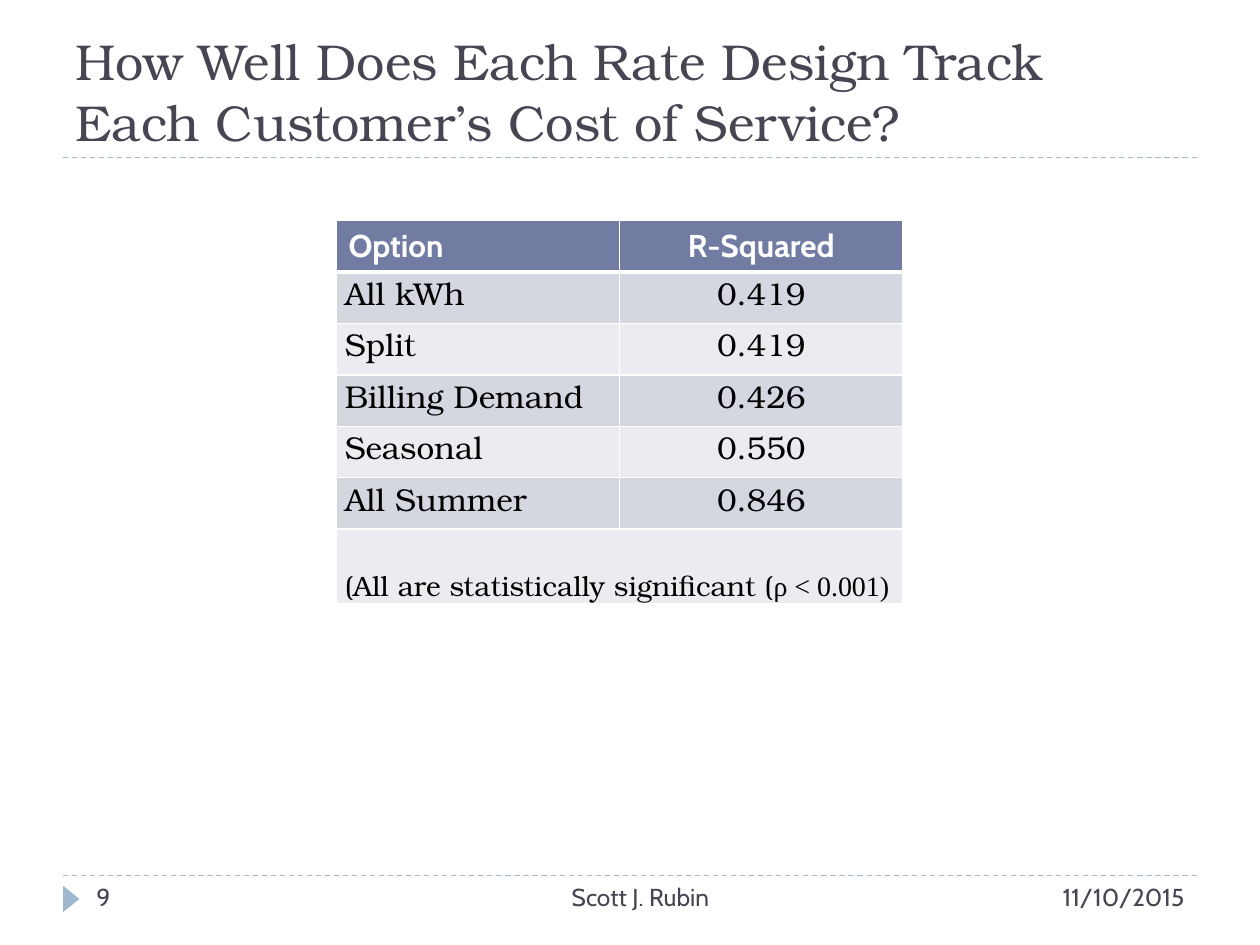
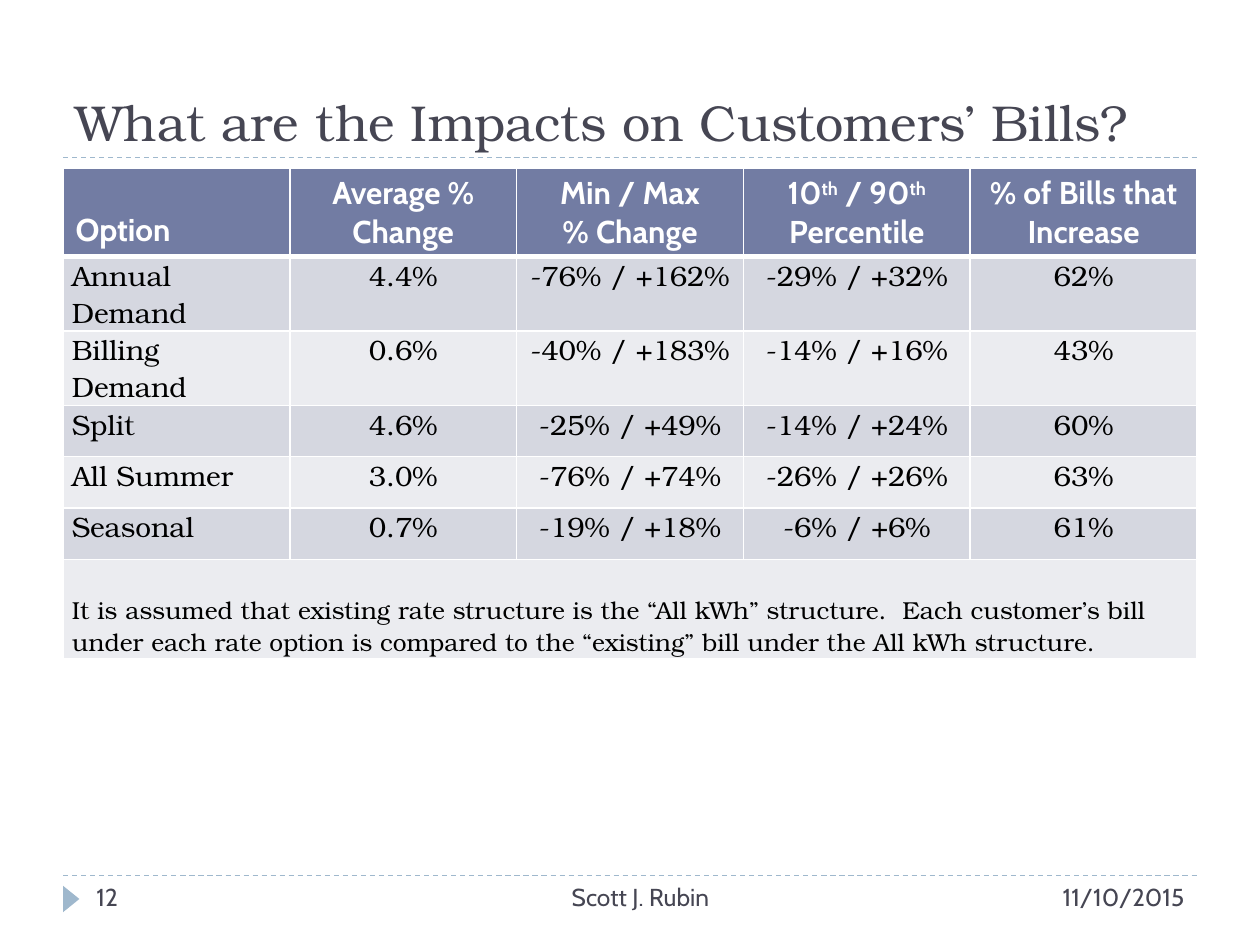
"""Build two slides that compare electric rate designs in tables."""
from lxml.etree import SubElement
from pptx import Presentation
from pptx.dml.color import RGBColor
from pptx.enum.dml import MSO_LINE
from pptx.enum.shapes import MSO_CONNECTOR, MSO_SHAPE
from pptx.enum.text import MSO_ANCHOR as ANCHOR, MSO_AUTO_SIZE as FIT, PP_ALIGN as ALIGN
from pptx.oxml.ns import qn
from pptx.util import Inches, Pt

INK = RGBColor(0x46, 0x46, 0x53)
ACCENT = RGBColor(0x9F, 0xB8, 0xCD)
HEADER = RGBColor(0x72, 0x7C, 0xA3)
BANDS = RGBColor(0xD5, 0xD7, 0xE0), RGBColor(0xEB, 0xEC, 0xF0)
WHITE = RGBColor(0xFF, 0xFF, 0xFF)
BLACK = RGBColor(0, 0, 0)

SERIF, SANS, MATH = "TeX Gyre Bonum", "Cabin", "Times New Roman"
COLUMNS, ROWS = 60, 90
LINE_ROWS = 4.9
SUPER = {"raised": True}


def write(frame, content, align=ALIGN.LEFT, **base):
    """Fill a frame with a string or (string, overrides) runs; newlines break lines."""
    frame.word_wrap = True
    paragraph = frame.paragraphs[0]
    paragraph.alignment = align
    runs = [(content, {})] if isinstance(content, str) else content
    for words, changes in runs:
        look = {**base, **changes}
        for number, line in enumerate(words.split("\n")):
            if number:
                paragraph.add_line_break()
            run = paragraph.add_run()
            run.text = line
            run.font.name = look["font"]
            run.font.size = Pt(look["size"])
            run.font.bold = look.get("bold", False)
            run.font.color.rgb = look["color"]
            if look.get("raised"):
                run._r.get_or_add_rPr().set("baseline", "30000")


def set_borders(cell, **widths):
    """Give a cell white borders with widths in points, keyed by side."""
    properties = cell._tc.get_or_add_tcPr()
    for side in "LRTB":
        edge = SubElement(properties, qn(f"a:ln{side}"), w=str(Pt(widths.get(side, 1))))
        fill = SubElement(edge, qn("a:solidFill"))
        SubElement(fill, qn("a:srgbClr"), val=str(WHITE))


class Deck:
    """Hold the shared style and the slide being built."""

    def __init__(self):
        """Start an empty 4:3 presentation."""
        self.show = Presentation()
        self.show.slide_width, self.show.slide_height = Inches(10), Inches(7.5)
        self.slide = None

    def x(self, columns):
        """Turn grid columns into a length."""
        return int(self.show.slide_width * columns / COLUMNS)

    def y(self, rows):
        """Turn grid rows into a length."""
        return int(self.show.slide_height * rows / ROWS)

    def box(self, left, top, width, height):
        """Turn a grid rectangle into lengths."""
        return self.x(left), self.y(top), self.x(width), self.y(height)

    def page(self, title, number):
        """Add a slide with its title, rules and footer."""
        self.slide = self.show.slides.add_slide(self.show.slide_layouts[5])
        for row in (83.4, 15):
            self.rule(row)
        self.marker()
        self.title(title)
        self.footer(number, 4, 13, ALIGN.LEFT)
        self.footer("Scott J. Rubin", 19, 23, ALIGN.CENTER)
        self.footer("11/10/2015", 42, 15, ALIGN.RIGHT)

    def title(self, words):
        """Place and format the title."""
        heading = self.slide.shapes.title
        heading.left, heading.top, heading.width, heading.height = self.box(3, 2, 54, 13)
        frame = heading.text_frame
        frame.auto_size = FIT.NONE
        frame.vertical_anchor = ANCHOR.BOTTOM
        write(frame, words, font=SERIF, size=28.8, color=INK)

    def rule(self, row):
        """Draw a dashed line between the side margins."""
        rule = self.slide.shapes.add_connector(
            MSO_CONNECTOR.STRAIGHT, self.x(3), self.y(row), self.x(57), self.y(row))
        rule.line.color.rgb = ACCENT
        rule.line.width = Pt(0.75)
        rule.line.dash_style = MSO_LINE.DASH
        SubElement(rule._element.spPr, qn("a:effectLst"))

    def marker(self):
        """Draw the arrowhead beside the page number."""
        marker = self.slide.shapes.add_shape(
            MSO_SHAPE.ISOSCELES_TRIANGLE, *self.box(2.76, 84.84, 1.26, 1.56))
        marker.rotation = 90
        marker.shadow.inherit = False
        marker.fill.solid()
        marker.fill.fore_color.rgb = ACCENT
        marker.line.fill.background()

    def footer(self, words, left, width, align):
        """Add one part of the footer."""
        part = self.slide.shapes.add_textbox(*self.box(left, 83.4, width, 4.8))
        write(part.text_frame, words, align, font=SANS, size=14, color=INK)

    def table(self, left, top, width, records, heights, size, note, note_size):
        """Add a banded table whose last row is a note across all columns."""
        count = len(records[0])
        rows = [*records, [note] + [""] * (count - 1)]
        table = self.slide.shapes.add_table(
            len(rows), count, *self.box(left, top, width, sum(heights))).table
        for column in table.columns:
            column.width = self.x(width / count)
        for r, record in enumerate(rows):
            table.rows[r].height = self.y(heights[r])
            for c, words in enumerate(record):
                cell = table.cell(r, c)
                set_borders(cell, T=3 if r == 1 else 1, B=3 if r == 0 else 1)
                cell.fill.solid()
                cell.fill.fore_color.rgb = BANDS[(r - 1) % 2] if r else HEADER
                if r:
                    cell.margin_left = cell.margin_right = Inches(0.07)
                    cell.margin_top = cell.margin_bottom = 0
                    look = dict(font=SERIF, size=size, color=BLACK)
                else:
                    look = dict(font=SANS, size=18, color=WHITE, bold=True)
                    cell.vertical_anchor = ANCHOR.BOTTOM
                if r == len(records):
                    look["size"] = note_size
                    cell.vertical_anchor = ANCHOR.BOTTOM
                if words:
                    write(cell.text_frame, words, ALIGN.CENTER if c else ALIGN.LEFT, **look)
        table.cell(len(records), 0).merge(table.cell(len(records), count - 1))


FIT_BY_OPTION = [
    ("Option", "R-Squared"),
    ("All kWh", "0.419"),
    ("Split", "0.419"),
    ("Billing Demand", "0.426"),
    ("Seasonal", "0.550"),
    ("All Summer", "0.846"),
]
SIGNIFICANCE = [
    ("(All are statistically significant (", {}),
    ("ρ < 0.001)", {"font": MATH}),
]
PERCENTILES = [("10", {}), ("th", SUPER), (" / 90", {}), ("th", SUPER), (" Percentile", {})]
BILL_IMPACTS = [
    ("Option", "Average % Change", "Min / Max\n% Change", PERCENTILES,
     "% of Bills that Increase"),
    ("Annual Demand", "4.4%", "-76% / +162%", "-29% / +32%", "62%"),
    ("Billing Demand", "0.6%", "-40% / +183%", "-14% / +16%", "43%"),
    ("Split", "4.6%", "-25% / +49%", "-14% / +24%", "60%"),
    ("All Summer", "3.0%", "-76% / +74%", "-26% / +26%", "63%"),
    ("Seasonal", "0.7%", "-19% / +18%", "-6% / +6%", "61%"),
]
ASSUMPTION = (
    "It is assumed that existing rate structure is the “All kWh” structure.  "
    "Each customer’s bill under each rate option is compared to the “existing” "
    "bill under the All kWh structure.")


def main():
    """Build both slides and save them."""
    deck = Deck()
    deck.page("How Well Does Each Rate Design Track\nEach Customer’s Cost of Service?", "9")
    deck.table(16, 21, 27, FIT_BY_OPTION, [LINE_ROWS] * 6 + [7.1], 18, SIGNIFICANCE, 16)
    deck.page("What are the Impacts on Customers’ Bills?", "12")
    deck.table(3, 16, 54, BILL_IMPACTS, [8.4, 7.1, 7.1] + [LINE_ROWS] * 3 + [9.4],
               16, ASSUMPTION, 14)
    deck.show.save("out.pptx")


if __name__ == "__main__":
    main()
